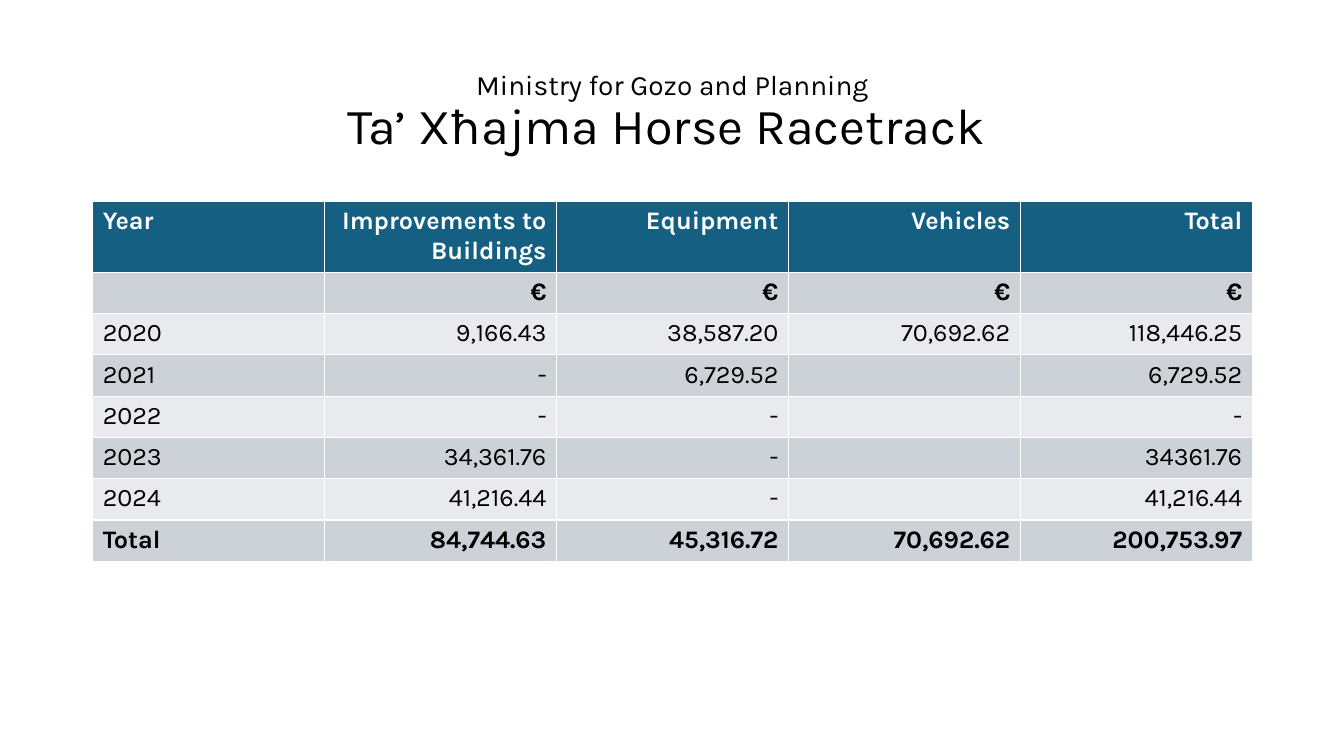
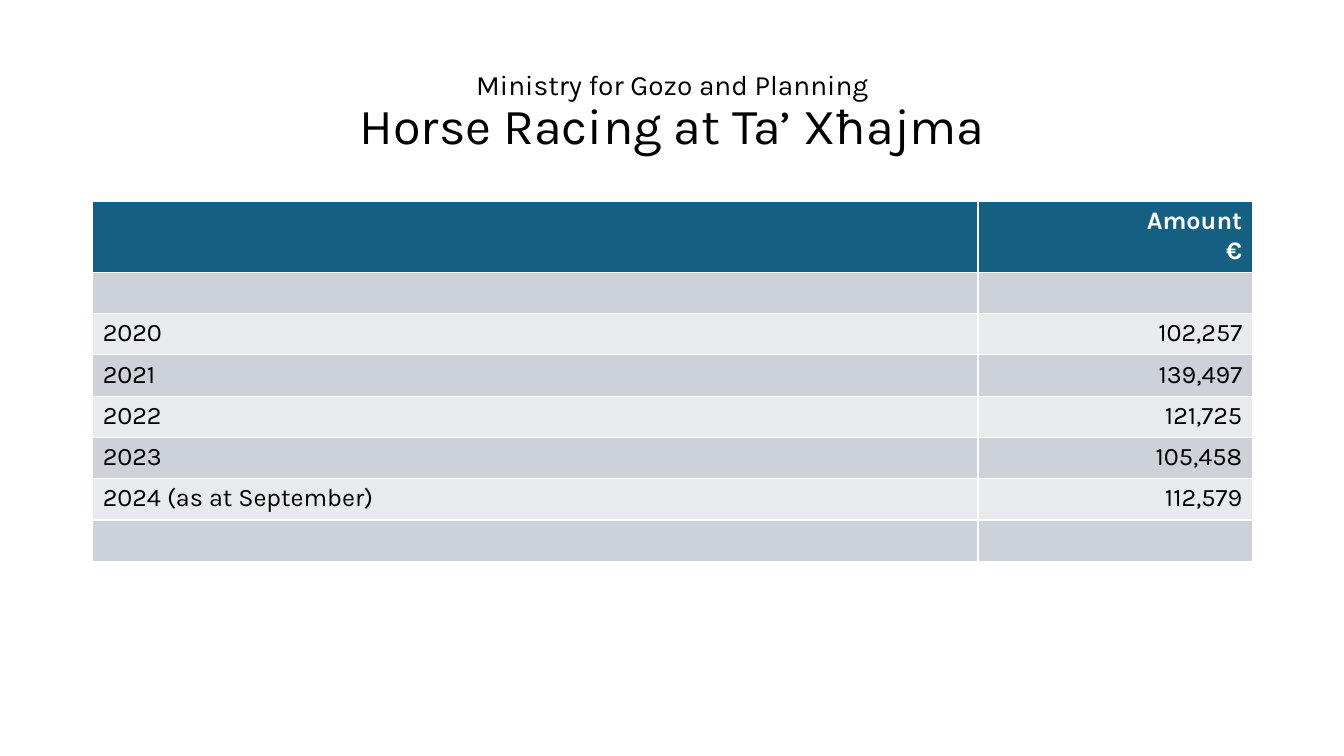
import pptx
import pptx.dml.color
import pptx.enum.text
import pptx.util

Inches = pptx.util.Inches
Pt = pptx.util.Pt
RGBColor = pptx.dml.color.RGBColor
Align = pptx.enum.text.PP_ALIGN

FONT = "Karla"
BLACK = RGBColor(0x00, 0x00, 0x00)
WHITE = RGBColor(0xFF, 0xFF, 0xFF)
HEADER_BLUE = RGBColor(0x15, 0x60, 0x82)
BANDS = (RGBColor(0xE8, 0xEA, 0xED), RGBColor(0xCC, 0xD2, 0xD8))

LEFT, WIDTH = 0.92, 11.5
TITLE_TOP, TITLE_HEIGHT = 0.4, 1.45
TABLE_TOP, HEADER_HEIGHT, ROW_HEIGHT = 2, 0.67, 0.41

MINISTRY = "Ministry for Gozo and Planning"
SLIDES = [
    {
        "title": "Ta’ Xħajma Horse Racetrack ",
        "columns": [2.3] * 5,
        "bold_rows": {0, 1, 7},
        "rows": [
            ("Year", "Improvements to Buildings", "Equipment", "Vehicles", "Total"),
            ("", "€", "€", "€", "€"),
            ("2020", "9,166.43", "38,587.20", "70,692.62", "118,446.25"),
            ("2021", "-", "6,729.52", "", "6,729.52"),
            ("2022", "-", "-", "", "-"),
            ("2023", "34,361.76", "-", "", "34361.76"),
            ("2024", "41,216.44", "-", "", "41,216.44"),
            ("Total", "84,744.63", "45,316.72", "70,692.62", "200,753.97"),
        ],
    },
    {
        "title": "Horse Racing at Ta’ Xħajma",
        "columns": [8.78, 2.72],
        "bold_rows": {0},
        "rows": [
            ("", "Amount\n€"),
            ("", ""),
            ("2020", "102,257"),
            ("2021", "139,497"),
            ("2022", "121,725"),
            ("2023", "105,458"),
            ("2024 (as at September)", "112,579"),
            ("", ""),
        ],
    },
]


def format_span(span, size, color, bold=False):
    span.font.name = FONT
    span.font.size = Pt(size)
    span.font.color.rgb = color
    span.font.bold = bold


def add_title(slide, title):
    box = slide.shapes.add_textbox(
        Inches(LEFT), Inches(TITLE_TOP), Inches(WIDTH), Inches(TITLE_HEIGHT))
    frame = box.text_frame
    frame.word_wrap = True
    frame.vertical_anchor = pptx.enum.text.MSO_ANCHOR.MIDDLE
    para = frame.paragraphs[0]
    para.text = f"{MINISTRY}\v{title}"
    para.alignment = Align.CENTER
    para.line_spacing = 0.9
    for span, size in zip(para.runs, (20, 36)):
        format_span(span, size, BLACK)


def fill_cell(cell, text, row, column, bold):
    cell.text = text
    cell.fill.solid()
    cell.fill.fore_color.rgb = BANDS[row % 2] if row else HEADER_BLUE
    for para in cell.text_frame.paragraphs:
        para.alignment = Align.RIGHT if column else Align.LEFT
        for span in para.runs:
            format_span(span, 18, BLACK if row else WHITE, bold)


def add_amounts(slide, rows, columns, bold_rows):
    heights = [HEADER_HEIGHT] + [ROW_HEIGHT] * (len(rows) - 1)
    table = slide.shapes.add_table(
        len(rows), len(columns), Inches(LEFT), Inches(TABLE_TOP),
        Inches(WIDTH), Inches(sum(heights))).table
    for column, width in zip(table.columns, columns):
        column.width = Inches(width)
    for r, (texts, height) in enumerate(zip(rows, heights)):
        table.rows[r].height = Inches(height)
        for c, text in enumerate(texts):
            fill_cell(table.cell(r, c), text, r, c, r in bold_rows)


def main():
    deck = pptx.Presentation()
    deck.slide_width = Inches(13.33)
    deck.slide_height = Inches(7.5)
    for content in SLIDES:
        slide = deck.slides.add_slide(deck.slide_layouts[6])
        add_title(slide, content["title"])
        add_amounts(slide, content["rows"], content["columns"], content["bold_rows"])
    deck.save("out.pptx")


if __name__ == "__main__":
    main()
